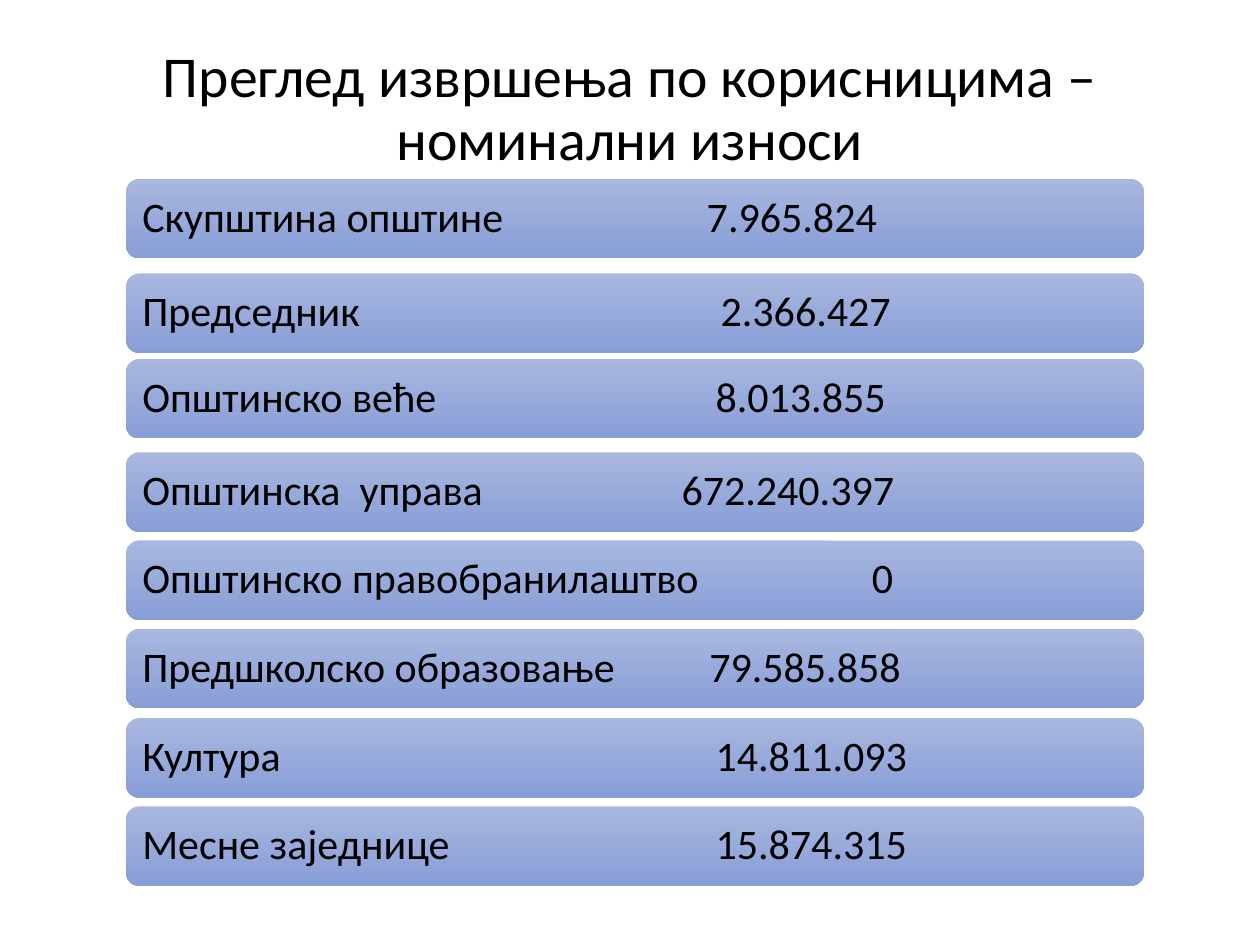
from lxml import etree
from pptx import Presentation
from pptx import util as u
from pptx.dml import color
from pptx.enum import shapes, text
from pptx.oxml import ns

deck = Presentation()
deck.slide_width, deck.slide_height = u.Inches(10), u.Inches(7.5)
page = deck.slides.add_slide(deck.slide_layouts[5])


def paint(target, value):
    target.rgb = color.RGBColor.from_string(value)


def write(para, words, size):
    para.line_spacing = 0.9
    span = para.add_run()
    span.text = words
    span.font.size = u.Pt(size)
    span.font.name = "Calibri"
    paint(span.font.color, "000000")


title = page.shapes.title
title.left, title.top = u.Inches(0.3), u.Inches(0.25)
title.width, title.height = u.Inches(9.4), u.Inches(1.17)
title.text_frame.word_wrap = True
title.text_frame.auto_size = text.MSO_AUTO_SIZE.NONE
title.text_frame.vertical_anchor = text.MSO_ANCHOR.BOTTOM
heading = title.text_frame.paragraphs[0]
heading.alignment = text.PP_ALIGN.CENTER
write(heading, "Преглед извршења по корисницима – номинални износи", 33)

bar_left, bar_width, bar_height = 1, 8.08, 0.63
inset, corner = 0.1, 0.03
rows = [
    (1.42, "Скупштина општине", "7.965.824", 5.61),
    (2.17, "Председник", "2.366.427", 5.72),
    (2.85, "Општинско веће", "8.013.855", 5.68),
    (3.59, "Општинска  управа", "672.240.397", 5.41),
    (4.29, "Општинско правобранилаштво", "0", 6.92),
    (4.99, "Предшколско образовање", "79.585.858", 5.63),
    (5.7, "Култура", "14.811.093", 5.68),
    (6.4, "Месне заједнице", "15.874.315", 5.68),
]

for top, user, amount, amount_left in rows:
    bar = page.shapes.add_shape(
        shapes.MSO_SHAPE.ROUNDED_RECTANGLE,
        u.Inches(bar_left), u.Inches(top), u.Inches(bar_width), u.Inches(bar_height),
    )
    bar.shadow.inherit = False
    bar.line.fill.background()
    bar.fill.gradient()
    bar.fill.gradient_angle = 270
    for stop, shade in zip(bar.fill.gradient_stops, ("A8B7DF", "889ED7")):
        paint(stop.color, shade)

    frame = bar.text_frame
    frame.word_wrap = True
    frame.vertical_anchor = text.MSO_ANCHOR.MIDDLE
    frame.margin_left = frame.margin_right = u.Inches(inset)
    para = frame.paragraphs[0]
    para.alignment = text.PP_ALIGN.LEFT
    write(para, f"{user}\t{amount}", 24)
    tabs = etree.SubElement(para._p.get_or_add_pPr(), ns.qn("a:tabLst"))
    position = u.Inches(amount_left - bar_left - inset - corner)
    etree.SubElement(tabs, ns.qn("a:tab"), pos=str(int(position)), algn="l")

deck.save("out.pptx")
